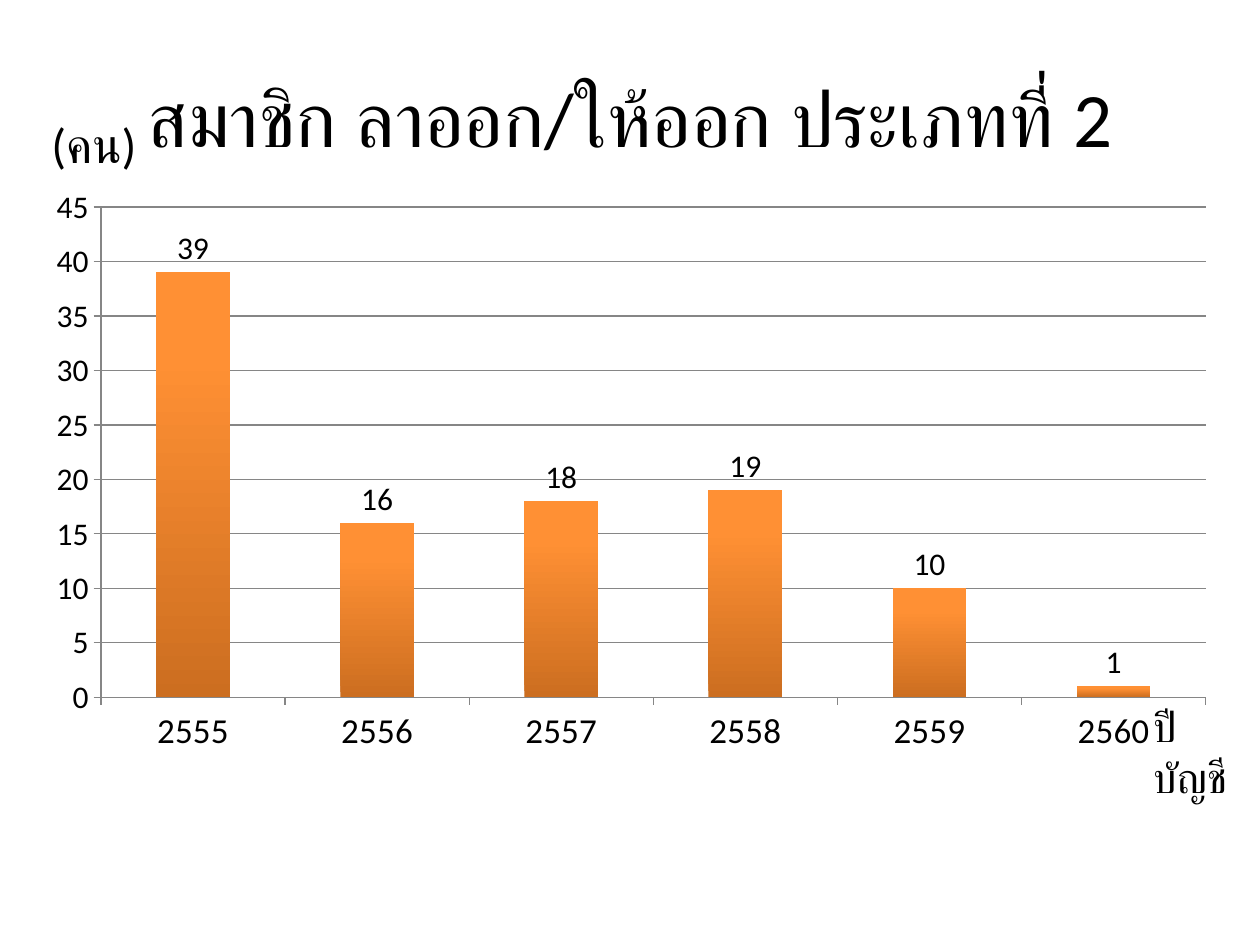
from lxml import etree
from pptx import Presentation
from pptx.chart.data import CategoryChartData
from pptx.dml.color import RGBColor
from pptx.enum.chart import XL_CHART_TYPE as ChartType, XL_LABEL_POSITION as LabelPosition, XL_TICK_MARK as TickMark
from pptx.enum.text import MSO_ANCHOR as Anchor, MSO_AUTO_SIZE as AutoSize, PP_ALIGN as Align
from pptx.oxml import parse_xml
from pptx.oxml.ns import nsdecls, qn
from pptx.util import Inches, Pt

FONT = "Calibri"
BLACK = RGBColor(0x00, 0x00, 0x00)
GRAY = RGBColor(0x86, 0x86, 0x86)
BAR_STOPS = (
    (0, RGBColor(0xCC, 0x6E, 0x20)),
    (80, RGBColor(0xFF, 0x90, 0x34)),
    (100, RGBColor(0xFF, 0x91, 0x36)),
)
WIDTH, HEIGHT = Inches(10), Inches(7.5)
YEARS = ("2555", "2556", "2557", "2558", "2559", "2560")
MEMBERS = (39, 16, 18, 19, 10, 1)


def share(left, top, width, height):
    """Turn shares of the slide's size into a position and a size."""
    return (int(WIDTH * left), int(HEIGHT * top), int(WIDTH * width), int(HEIGHT * height))


def set_font(font, size):
    """Give a font the deck's typeface, colour and the size asked for."""
    font.name = FONT
    font.size = Pt(size)
    font.color.rgb = BLACK


def write(frame, text, size=24, align=Align.LEFT, anchor=Anchor.TOP):
    """Put one formatted paragraph into a text frame."""
    frame.word_wrap = True
    frame.vertical_anchor = anchor
    para = frame.paragraphs[0]
    para.alignment = align
    span = para.add_run()
    span.text = text
    set_font(span.font, size)


def add_label(page, text, area, size):
    """Add a text box that names the unit of an axis."""
    box = page.shapes.add_textbox(*share(*area))
    write(box.text_frame, text, size=size)
    box.text_frame.auto_size = AutoSize.SHAPE_TO_FIT_TEXT


def fill_gradient(series, stops):
    """Fill the bars with a gradient that runs from bottom to top."""
    marks = "".join(
        f'<a:gs pos="{place * 1000}"><a:srgbClr val="{color}"/></a:gs>' for place, color in stops
    )
    gradient = parse_xml(
        f'<a:gradFill {nsdecls("a")} rotWithShape="1"><a:gsLst>{marks}</a:gsLst>'
        '<a:lin ang="16200000" scaled="0"/></a:gradFill>'
    )
    series.format.fill.background()
    properties = series.format.fill._xPr
    properties.replace(properties.find(qn("a:noFill")), gradient)


def place_plot(chart, **shares):
    """Fix the inner plot area in shares of the chart's size."""
    area = chart._chartSpace.chart.plotArea
    for old in area.findall(qn("c:layout")):
        area.remove(old)
    layout = etree.Element(qn("c:layout"))
    manual = etree.SubElement(layout, qn("c:manualLayout"))
    settings = {"layoutTarget": "inner", "xMode": "edge", "yMode": "edge", **shares}
    for name, value in settings.items():
        etree.SubElement(manual, qn(f"c:{name}")).set("val", str(value))
    area.insert(0, layout)


def format_axis(axis, size):
    """Format the line, ticks and labels of an axis."""
    axis.major_tick_mark = TickMark.OUTSIDE
    axis.minor_tick_mark = TickMark.NONE
    axis.format.line.color.rgb = GRAY
    axis.format.line.width = Pt(0.75)
    set_font(axis.tick_labels.font, size)


def add_member_chart(page, area):
    """Add the column chart of members leaving each year."""
    data = CategoryChartData()
    data.categories = YEARS
    data.add_series("Series 1", MEMBERS)
    chart = page.shapes.add_chart(ChartType.COLUMN_CLUSTERED, *share(*area), data).chart
    chart.has_legend = chart.has_title = False
    set_font(chart.font, 10)
    place_plot(chart, x=0.06, y=0.05, w=0.92, h=0.83)

    format_axis(chart.category_axis, 20)
    scale = chart.value_axis
    format_axis(scale, 18)
    scale.minimum_scale, scale.maximum_scale, scale.major_unit = 0, 45, 5
    scale.has_major_gridlines = True
    scale.major_gridlines.format.line.color.rgb = GRAY
    scale.major_gridlines.format.line.width = Pt(0.75)

    plot = chart.plots[0]
    plot.gap_width = 150
    plot.vary_by_categories = False
    fill_gradient(plot.series[0], BAR_STOPS)
    labels = plot.series[0].data_labels
    labels.show_value = True
    labels.position = LabelPosition.OUTSIDE_END
    set_font(labels.font, 18)


def main():
    """Build the slide and save the deck."""
    deck = Presentation()
    deck.slide_width, deck.slide_height = WIDTH, HEIGHT
    page = deck.slides.add_slide(deck.slide_layouts[5])
    title = page.shapes.title
    title.left, title.top, title.width, title.height = share(0.05, 0.04, 0.9, 1 / 6)
    write(title.text_frame, "สมาชิก ลาออก/ให้ออก ประเภทที่ 2",
          size=44, align=Align.CENTER, anchor=Anchor.MIDDLE)
    add_member_chart(page, (0.023, 0.188, 0.953, 0.625))
    add_label(page, "ปีบัญชี", (0.906, 0.735, 0.094, 0.067), 24)
    add_label(page, "(คน)", (0.031, 0.115, 0.148, 0.076), 28)
    deck.save("out.pptx")


if __name__ == "__main__":
    main()
